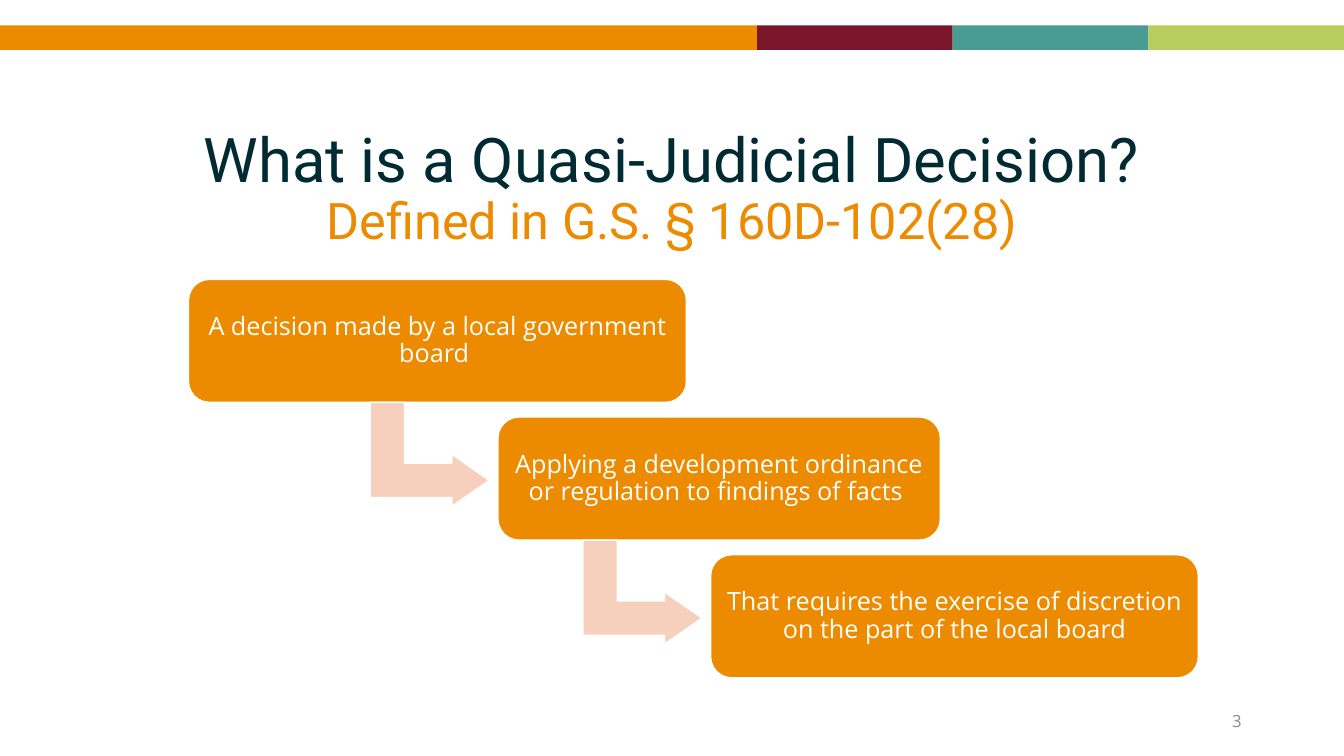
from pptx import Presentation
from pptx.dml.color import RGBColor
from pptx.enum.shapes import MSO_SHAPE
from pptx.enum.text import MSO_ANCHOR, MSO_AUTO_SIZE, PP_ALIGN
from pptx.util import Cm, Pt

COLORS = {
    "orange": "ED8B00", "maroon": "79162A", "teal": "499C94", "lime": "B8CD5E",
    "navy": "012B32", "peach": "F6D0BD", "white": "FFFFFF", "gray": "8C8C8C",
}
TITLE_LINES = [
    ("What is a Quasi-Judicial Decision?", 44, "navy"),
    ("Defined in G.S. § 160D-102(28)", 36, "orange"),
]
# Text, left and width in cm
STEPS = [
    ("A decision made by a local government board ", 4.75, 12.55),
    ("Applying a development ordinance or regulation to findings of facts ", 12.55, 11.15),
    ("That requires the exercise of discretion on the part of the local board", 17.91, 12.29),
]
# Color and width in cm, from left to right
BANDS = [("orange", 19.08), ("maroon", 4.93), ("teal", 4.93), ("lime", 4.93)]
PAGE_NUMBER = "3"

STEP_TOP, STEP_PITCH, STEP_HEIGHT = 7.04, 3.47, 3.1
ARROW_WIDTH, ARROW_HEIGHT = 2.62, 3.0
ARROW_BACK, ARROW_UP = 3.03, 0.56  # offset from the step it points to


def color(name):
    return RGBColor.from_string(COLORS[name])


def set_font(font, name, size, color_name):
    font.name = name
    font.size = Pt(size)
    font.color.rgb = color(color_name)


def add_shape(kind, left, top, width, height, fill, outline=None):
    shape = slide.shapes.add_shape(kind, Cm(left), Cm(top), Cm(width), Cm(height))
    shape.shadow.inherit = False
    shape.fill.solid()
    shape.fill.fore_color.rgb = color(fill)
    if outline:
        shape.line.color.rgb = color(outline)
        shape.line.width = Pt(1)
    else:
        shape.line.fill.background()
    return shape


presentation = Presentation()
presentation.slide_width, presentation.slide_height = Cm(33.87), Cm(19.05)
slide = presentation.slides.add_slide(presentation.slide_layouts[5])

# Color bands
left = 0
for band_color, width in BANDS:
    add_shape(MSO_SHAPE.RECTANGLE, left, 0.64, width, 0.62, band_color)
    left += width

# Title
title = slide.shapes.title
title.left, title.top, title.width, title.height = Cm(2.33), Cm(2.95), Cm(29.21), Cm(3.68)
title.text_frame.auto_size = MSO_AUTO_SIZE.NONE
title.text_frame.vertical_anchor = MSO_ANCHOR.MIDDLE
paragraph = title.text_frame.paragraphs[0]
paragraph.alignment = PP_ALIGN.CENTER
paragraph.line_spacing = 0.9
for index, (text, size, color_name) in enumerate(TITLE_LINES):
    if index:
        paragraph.add_line_break()
    run = paragraph.add_run()
    run.text = text
    set_font(run.font, "Roboto", size, color_name)

# Descending steps, each after the first with an arrow leading to it
for index, (text, left, width) in enumerate(STEPS):
    top = STEP_TOP + index * STEP_PITCH
    if index:
        arrow = add_shape(MSO_SHAPE.BENT_UP_ARROW, left - ARROW_BACK, top - ARROW_UP,
                          ARROW_WIDTH, ARROW_HEIGHT, "peach", "white")
        arrow.rotation = 90
        for number, value in enumerate((0.33, 0.25, 0.36)):
            arrow.adjustments[number] = value
    step = add_shape(MSO_SHAPE.ROUNDED_RECTANGLE, left, top, width, STEP_HEIGHT,
                     "orange", "white")
    step.adjustments[0] = 0.17
    frame = step.text_frame
    frame.word_wrap = True
    frame.vertical_anchor = MSO_ANCHOR.MIDDLE
    frame.margin_left = frame.margin_right = Cm(0.18)
    frame.margin_top = frame.margin_bottom = Cm(0.18)
    paragraph = frame.paragraphs[0]
    paragraph.text = text
    paragraph.alignment = PP_ALIGN.CENTER
    paragraph.line_spacing = 0.9
    set_font(paragraph.font, "Open Sans", 18, "white")

# Page number
number_box = slide.shapes.add_textbox(Cm(23.92), Cm(17.66), Cm(7.62), Cm(1.01))
number_box.text_frame.word_wrap = True
number_box.text_frame.vertical_anchor = MSO_ANCHOR.MIDDLE
paragraph = number_box.text_frame.paragraphs[0]
paragraph.text = PAGE_NUMBER
paragraph.alignment = PP_ALIGN.RIGHT
set_font(paragraph.font, "Open Sans", 12, "gray")

presentation.save("out.pptx")
